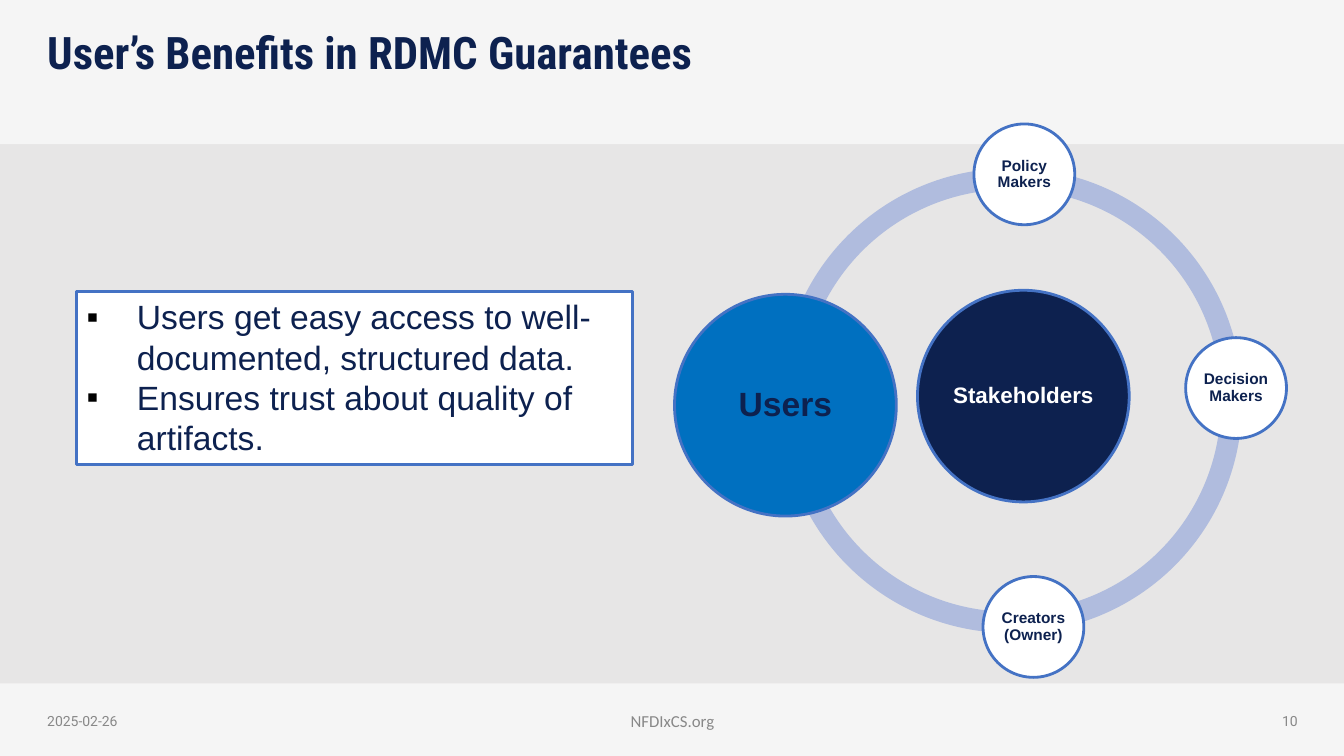
import pptx
import pptx.util
import pptx.dml.color
import pptx.enum.shapes
import pptx.enum.text
import pptx.oxml.ns
import lxml.etree

RGBColor = pptx.dml.color.RGBColor
Shapes = pptx.enum.shapes.MSO_SHAPE
Align = pptx.enum.text.PP_ALIGN
Anchor = pptx.enum.text.MSO_ANCHOR

NAVY = RGBColor(0x0D, 0x21, 0x4F)
BLUE = RGBColor(0x00, 0x70, 0xC0)
OUTLINE = RGBColor(0x44, 0x72, 0xC4)
RING = RGBColor(0xB0, 0xBC, 0xDE)
GREY = RGBColor(0x88, 0x88, 0x88)
BACKGROUND = RGBColor(0xE7, 0xE6, 0xE6)
WHITE = RGBColor(0xFF, 0xFF, 0xFF)
BLACK = RGBColor(0, 0, 0)

EMU_PER_PX = 9144
WIDTH, HEIGHT = 1333, 750


def px(length):
    return pptx.util.Emu(length * EMU_PER_PX)


def add_element(parent, tag, **attributes):
    return lxml.etree.SubElement(parent, pptx.oxml.ns.qn(tag), attributes)


def add_shape(slide, kind, box, fill, outlined=False):
    shape = slide.shapes.add_shape(kind, *map(px, box))
    shape.shadow.inherit = False
    shape.fill.solid()
    shape.fill.fore_color.rgb = fill
    if outlined:
        shape.line.color.rgb = OUTLINE
        shape.line.width = pptx.util.Pt(2)
    else:
        shape.line.fill.background()
    return shape


def set_frame(shape, anchor, horizontal=10, vertical=5):
    frame = shape.text_frame
    frame.word_wrap = True
    frame.vertical_anchor = anchor
    frame.margin_left = frame.margin_right = px(horizontal)
    frame.margin_top = frame.margin_bottom = px(vertical)
    return frame


def write(paragraph, text, font, size, color, bold=False, align=Align.LEFT, spacing=None):
    paragraph.alignment = align
    if spacing:
        paragraph.line_spacing = spacing
    run = paragraph.add_run()
    run.text = text
    run.font.name = font
    run.font.size = pptx.util.Pt(size)
    run.font.bold = bold
    run.font.color.rgb = color


def add_band(slide, box):
    band = add_shape(slide, Shapes.RECTANGLE, box, WHITE)
    color = band.fill._xPr.find(".//" + pptx.oxml.ns.qn("a:srgbClr"))
    add_element(color, "a:alpha", val="60000")


def add_header(slide, box):
    left, top, width, height = box
    add_band(slide, box)
    title = slide.shapes.add_textbox(px(left + 37), px(top + 26), px(width - 73), px(height - 26))
    frame = set_frame(title, Anchor.TOP)
    write(frame.paragraphs[0], "User’s Benefits in RDMC Guarantees",
          "Roboto Condensed", 32, NAVY, True, spacing=0.9)


def add_footer(slide, box):
    left, top, width, height = box
    add_band(slide, box)
    for offset, field_width, text, font, size, align in (
        (37, 300, "2025-02-26", "Roboto", 10, Align.LEFT),
        (374, 586, "NFDIxCS.org", "Calibri", 12, Align.CENTER),
        (997, 300, "10", "Roboto", 10, Align.RIGHT),
    ):
        field = slide.shapes.add_textbox(px(left + offset), px(top + 17), px(field_width), px(40))
        frame = set_frame(field, Anchor.MIDDLE)
        write(frame.paragraphs[0], text, font, size, GREY, align=align)


def add_benefits(slide, box):
    panel = add_shape(slide, Shapes.RECTANGLE, box, WHITE, True)
    frame = set_frame(panel, Anchor.TOP)
    benefits = (
        "Users get easy access to well-documented, structured data.",
        "Ensures trust about quality of artifacts.",
    )
    for index, benefit in enumerate(benefits):
        paragraph = frame.add_paragraph() if index else frame.paragraphs[0]
        properties = paragraph._p.get_or_add_pPr()
        properties.set("marL", str(px(50)))
        properties.set("indent", str(px(-50)))
        bullet_color = add_element(properties, "a:buClr")
        add_element(bullet_color, "a:srgbClr", val=str(BLACK))
        add_element(properties, "a:buFont", typeface="Arial")
        add_element(properties, "a:buChar", char="▪")
        write(paragraph, benefit, "Arial", 24, NAVY)


def add_circle(slide, box, fill, text, size, color):
    circle = add_shape(slide, Shapes.OVAL, box, fill, True)
    frame = set_frame(circle, Anchor.MIDDLE, 2, 2)
    write(frame.paragraphs[0], text, "Arial", size, color, True, Align.CENTER, 0.9)


def add_stakeholder_ring(slide, box):
    left, top, width, height = box
    diameter = 456
    for x, y, start, end in (
        (105, 49, 84.1, 179.5),
        (107, 49, 356.24, 84.71),
        (107, 44, 273.07, 357.46),
        (105, 44, 178.19, 273.64),
    ):
        arc = add_shape(slide, Shapes.BLOCK_ARC, (left + x, top + y, diameter, diameter), RING)
        arc.adjustments[0] = start * 0.6
        arc.adjustments[1] = end * 0.6
        arc.adjustments[2] = 0.046
    for x, y, size, fill, text, points, color in (
        (241, 165, 210, NAVY, "Stakeholders", 16, WHITE),
        (0, 169, 220, BLUE, "Users", 24, NAVY),
        (297, 0, 100, WHITE, "Policy Makers", 11, NAVY),
        (507, 212, 100, WHITE, "Decision Makers", 11, NAVY),
        (306, 449, 100, WHITE, "Creators (Owner)", 11, NAVY),
    ):
        add_circle(slide, (left + x, top + y, size, size), fill, text, points, color)


def main():
    presentation = pptx.Presentation()
    presentation.slide_width = px(WIDTH)
    presentation.slide_height = px(HEIGHT)
    slide = presentation.slides.add_slide(presentation.slide_layouts[6])
    slide.background.fill.solid()
    slide.background.fill.fore_color.rgb = BACKGROUND
    add_header(slide, (0, 0, WIDTH, 143))
    add_footer(slide, (0, 678, WIDTH, HEIGHT - 678))
    add_benefits(slide, (76, 289, 551, 172))
    add_stakeholder_ring(slide, (669, 123, 607, 549))
    presentation.save("out.pptx")


if __name__ == "__main__":
    main()
